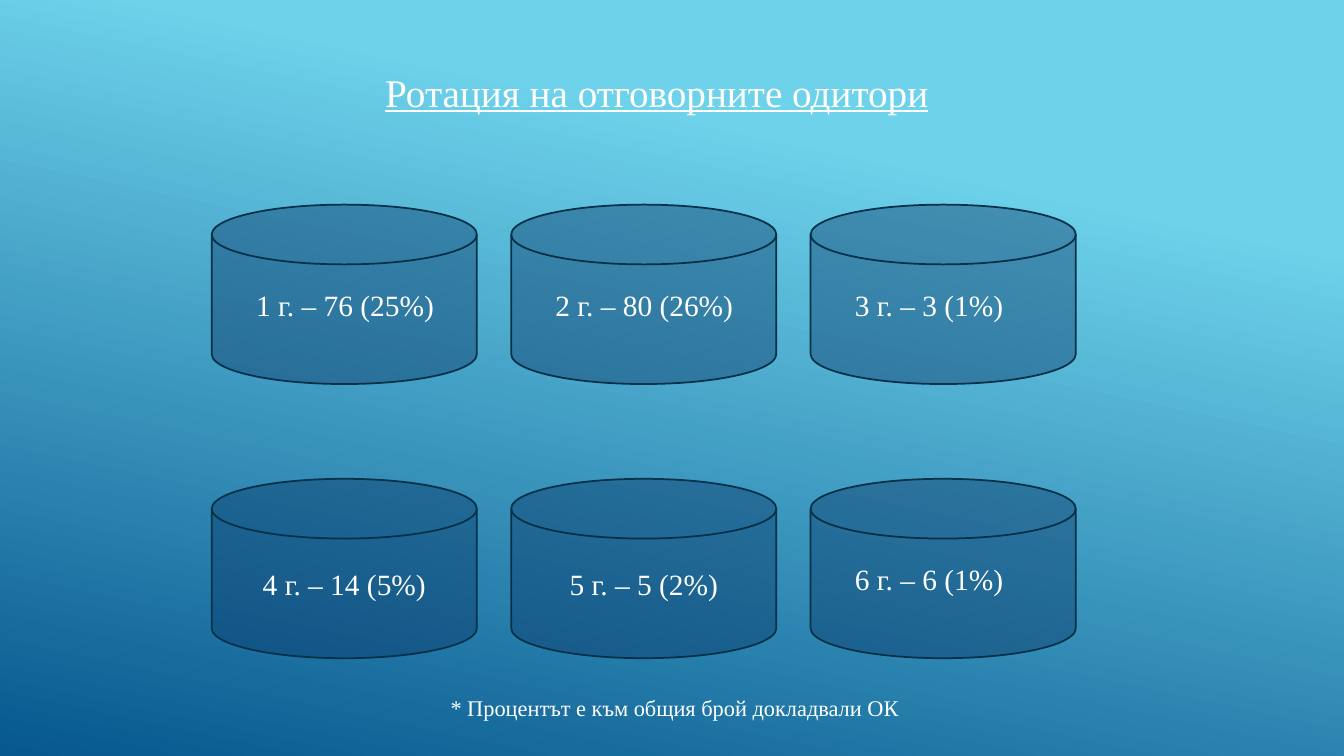
from lxml import etree
from pptx import Presentation
from pptx.dml.color import RGBColor
from pptx.enum.shapes import MSO_SHAPE
from pptx.enum.text import MSO_ANCHOR, MSO_AUTO_SIZE, PP_ALIGN
from pptx.oxml.ns import qn
from pptx.util import Inches, Pt

TITLE = "Ротация на отговорните одитори"
FOOTNOTE = "* Процентът е към общия брой докладвали ОК"
YEARS = [
    ("1 г. – 76 (25%)", "subtitle"),
    ("2 г. – 80 (26%)", "label"),
    ("3 г. – 3 (1%)", "label"),
    ("4 г. – 14 (5%)", "inside"),
    ("5 г. – 5 (2%)", "inside"),
    ("6 г. – 6 (1%)", "label"),
]

FONT = "Times New Roman"
WHITE = RGBColor(0xFF, 0xFF, 0xFF)
SKY = RGBColor(0x6E, 0xD2, 0xEB)
DEEP_BLUE = RGBColor(0x06, 0x58, 0x8E)
DISK_FILL = RGBColor(0x05, 0x2F, 0x61)
DISK_LINE = RGBColor(0x04, 0x31, 0x48)
DISK = MSO_SHAPE.FLOWCHART_MAGNETIC_DISK
LEFT, CENTER = PP_ALIGN.LEFT, PP_ALIGN.CENTER
TOP, MIDDLE, BOTTOM = MSO_ANCHOR.TOP, MSO_ANCHOR.MIDDLE, MSO_ANCHOR.BOTTOM
NO_FIT, FIT_SHAPE = MSO_AUTO_SIZE.NONE, MSO_AUTO_SIZE.SHAPE_TO_FIT_TEXT

COLUMNS = 3
GRID_LEFT, GRID_TOP = 2.1, 2.03
STEP_X, STEP_Y = 2.97, 2.72
DISK_WIDTH, DISK_HEIGHT = 2.63, 1.78
LABEL_DX, LABEL_DY = 0.34, 0.77
LABEL_WIDTH, LABEL_HEIGHT = 2.14, 0.74


def place(shape, left, top, width, height):
    """Move and size a shape in inches."""
    shape.left, shape.top = Inches(left), Inches(top)
    shape.width, shape.height = Inches(width), Inches(height)


def write(shape, text, size, align=LEFT, anchor=TOP, wrap=True, fit=NO_FIT):
    """Put one formatted line of text in a shape and return its run."""
    frame = shape.text_frame
    frame.text = text
    frame.word_wrap = wrap
    frame.auto_size = fit
    frame.vertical_anchor = anchor
    paragraph = frame.paragraphs[0]
    paragraph.alignment = align
    paragraph.space_before = Pt(0)
    run = paragraph.runs[0]
    run.font.name = FONT
    run.font.size = Pt(size)
    run.font.color.rgb = WHITE
    return run


def add_disk(slide, left, top):
    """Draw one translucent disk."""
    disk = slide.shapes.add_shape(
        DISK, Inches(left), Inches(top), Inches(DISK_WIDTH), Inches(DISK_HEIGHT))
    disk.shadow.inherit = False
    disk.fill.solid()
    disk.fill.fore_color.rgb = DISK_FILL
    color = disk.fill._xPr.find(qn("a:solidFill")).find(qn("a:srgbClr"))
    etree.SubElement(color, qn("a:alpha")).set("val", "40000")
    disk.line.color.rgb = DISK_LINE
    disk.line.width = Pt(1.25)
    return disk


def paint_background(slide):
    """Fill the slide with the blue gradient."""
    fill = slide.background.fill
    fill.gradient()
    fill.gradient_angle = 258
    for stop, color, position in zip(fill.gradient_stops, (SKY, DEEP_BLUE), (0.24, 1)):
        stop.color.rgb = color
        stop.position = position


def main():
    """Build the slide on auditor rotation."""
    presentation = Presentation()
    presentation.slide_width = Inches(13.33)
    presentation.slide_height = Inches(7.5)
    slide = presentation.slides.add_slide(presentation.slide_layouts[0])
    paint_background(slide)

    title, subtitle = slide.shapes.title, slide.placeholders[1]
    place(title, 3.72, 0.29, 6, 0.9)
    write(title, TITLE, 28, anchor=BOTTOM).font.underline = True

    for index, (text, kind) in enumerate(YEARS):
        row, column = divmod(index, COLUMNS)
        left = GRID_LEFT + column * STEP_X
        top = GRID_TOP + row * STEP_Y
        disk = add_disk(slide, left, top)
        if kind == "inside":
            write(disk, text, 21, CENTER, MIDDLE)
            continue
        if kind == "subtitle":
            label = subtitle
            disk._element.addnext(label._element)
        else:
            label = slide.shapes.add_textbox(0, 0, 0, 0)
        place(label, left + LABEL_DX, top + LABEL_DY, LABEL_WIDTH, LABEL_HEIGHT)
        write(label, text, 21)

    footnote = slide.shapes.add_textbox(
        Inches(4.37), Inches(6.84), Inches(4.7), Inches(0.37))
    write(footnote, FOOTNOTE, 16, wrap=False, fit=FIT_SHAPE)
    presentation.save("out.pptx")


if __name__ == "__main__":
    main()
